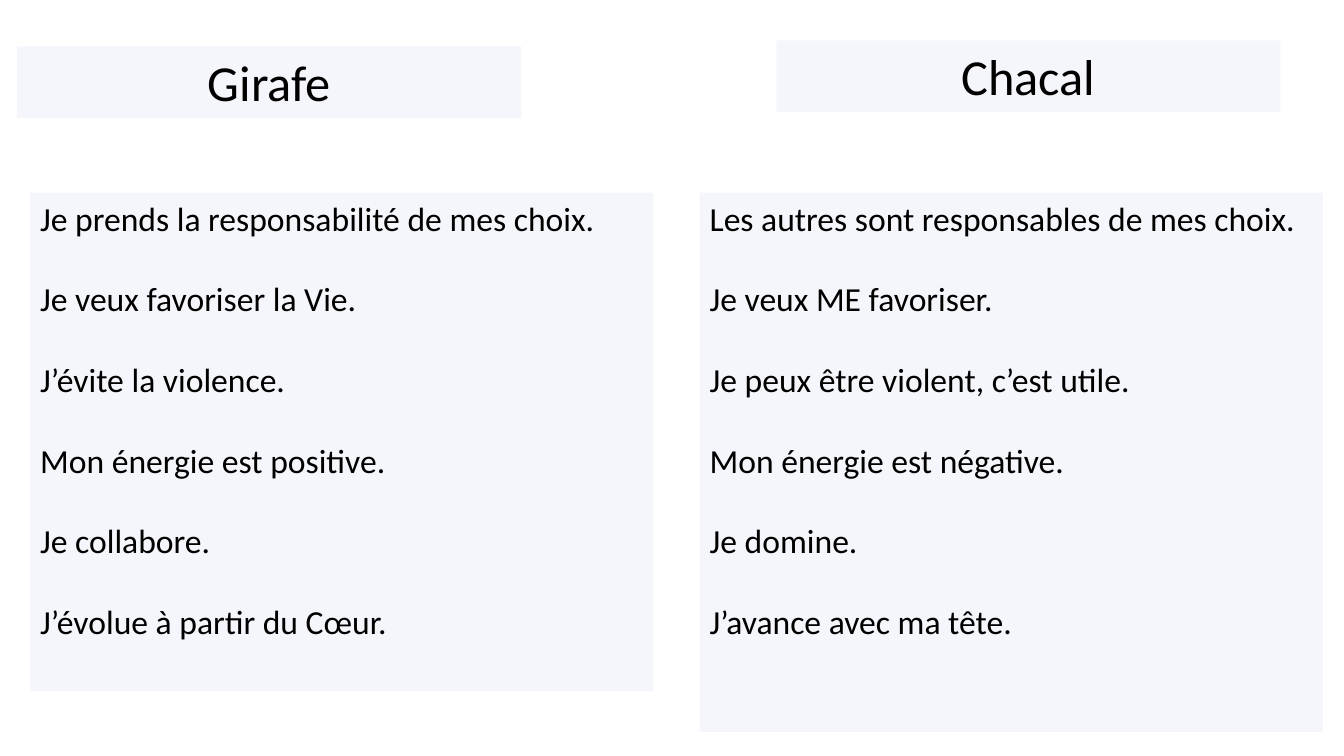
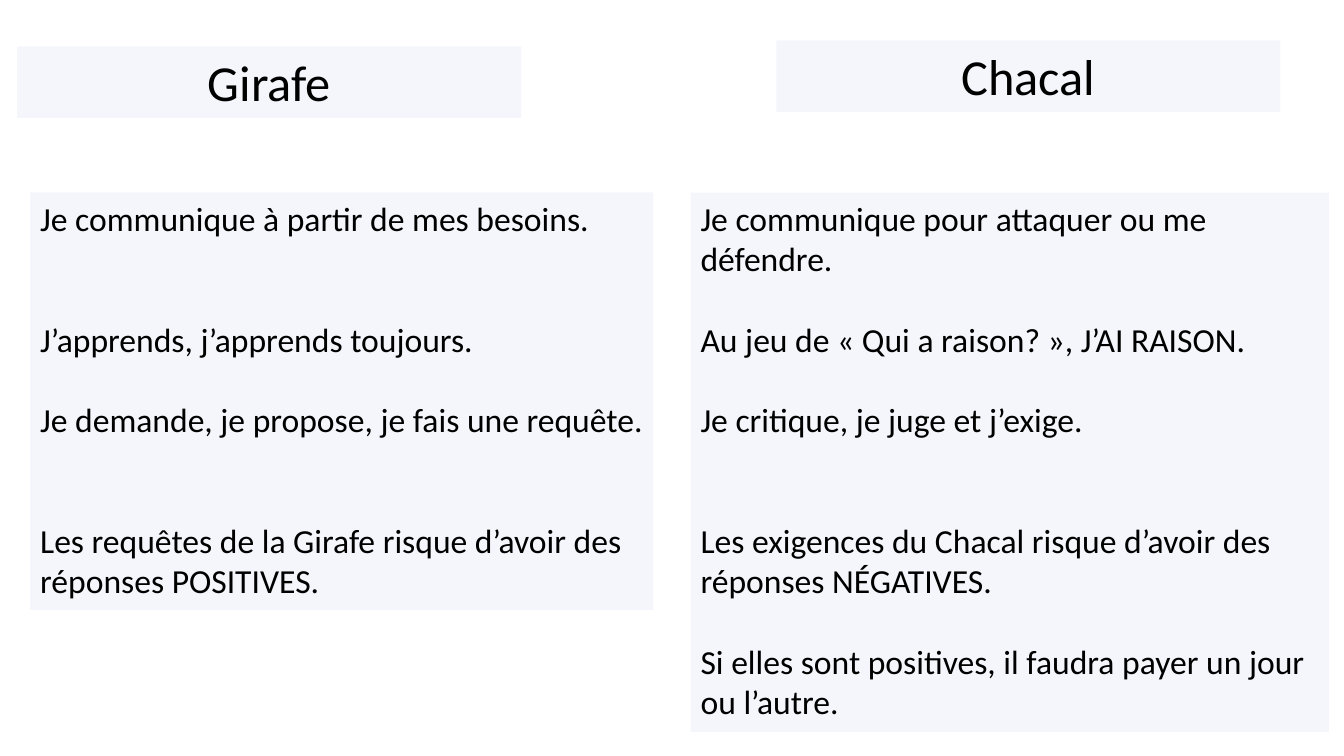
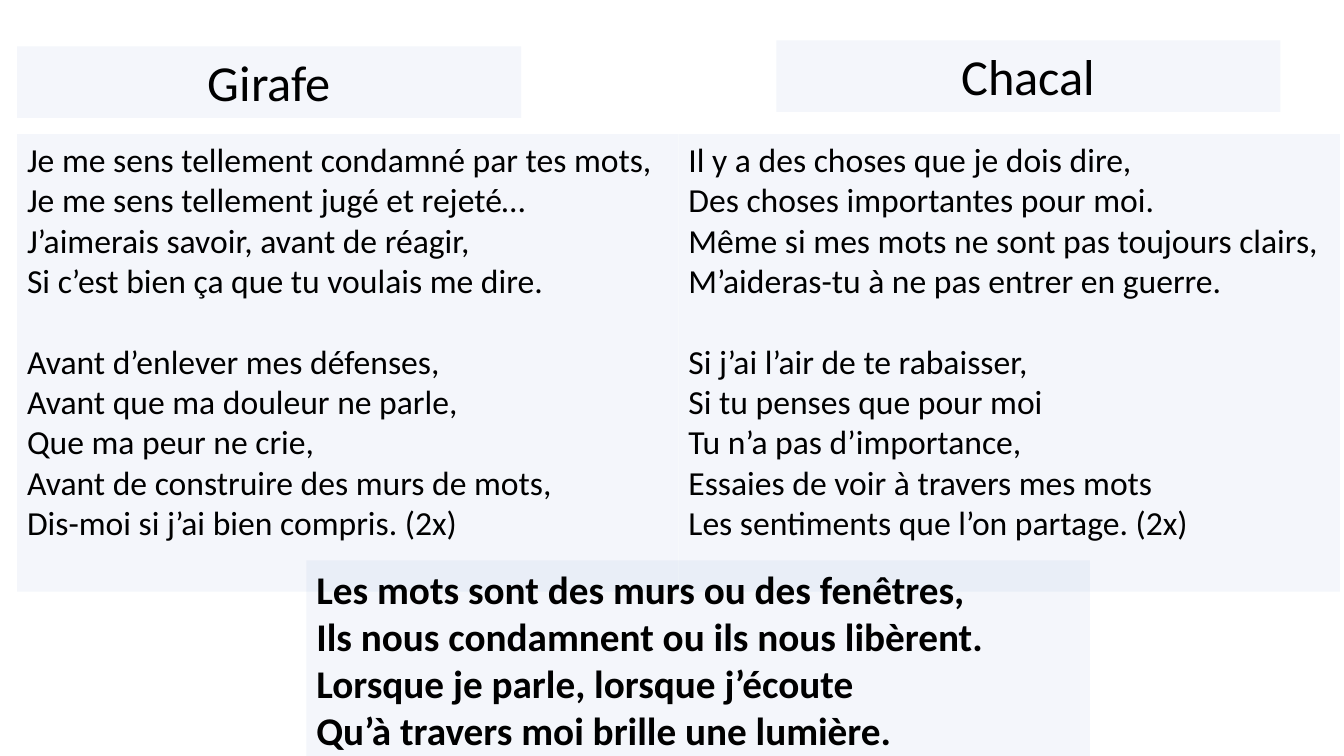
from lxml import etree
from pptx import Presentation
from pptx import util as u
from pptx.dml import color
from pptx.enum import text
from pptx.oxml import ns

COLORS = {"panel": "4472C4", "ink": "000000"}
PANEL_OPACITY = 6
LINE_PITCH = 28.8

HEADING = {"name": "Calibri", "size": u.Pt(36), "bold": False}
BODY = {"name": "Calibri", "size": u.Pt(24), "bold": False}
CHORUS = {"name": "Calibri", "size": u.Pt(28), "bold": True}
FRAME = {
    "word_wrap": True,
    "auto_size": text.MSO_AUTO_SIZE.NONE,
    "vertical_anchor": text.MSO_ANCHOR.TOP,
    "margin_left": u.Inches(0.1),
    "margin_right": u.Inches(0.1),
    "margin_top": u.Inches(0.05),
    "margin_bottom": u.Inches(0.05),
}

GIRAFE_AREA = (0.17, 0.46, 5, 0.71)
CHACAL_AREA = (7.7, 0.4, 5, 0.71)
CHORUS_AREA = (3.04, 5.56, 7.77, 1.94)

EVEN_GAPS = (0, 1, 1, 1, 1, 1)
STANZA_GAPS = (0, 0, 0, 0, 1, 0, 0, 0, 0, 0)

CHOICES = [
    ((0.3, 1.91, 6.18, 4.95), EVEN_GAPS, [
        "Je prends la responsabilité de mes choix.",
        "Je veux favoriser la Vie.",
        "J’évite la violence.",
        "Mon énergie est positive.",
        "Je collabore.",
        "J’évolue à partir du Cœur.",
    ]),
    ((6.94, 1.91, 6.18, 5.35), EVEN_GAPS, [
        "Les autres sont responsables de mes choix.",
        "Je veux ME favoriser.",
        "Je peux être violent, c’est utile.",
        "Mon énergie est négative.",
        "Je domine.",
        "J’avance avec ma tête.",
    ]),
]

REQUESTS = [
    ((0.3, 1.91, 6.18, 4.14), (0, 2, 1, 2), [
        "Je communique à partir de mes besoins.",
        "J’apprends, j’apprends toujours.",
        "Je demande, je propose, je fais une requête.",
        "Les requêtes de la Girafe risque d’avoir des réponses POSITIVES.",
    ]),
    ((6.85, 1.91, 6.33, 5.35), (0, 1, 1, 2, 1), [
        "Je communique pour attaquer ou me défendre.",
        "Au jeu de « Qui a raison? », J’AI RAISON.",
        "Je critique, je juge et j’exige.",
        "Les exigences du Chacal risque d’avoir des réponses NÉGATIVES.",
        "Si elles sont positives, il faudra payer un jour ou l’autre.",
    ]),
]

VERSES = [
    ((0.17, 1.33, 6.56, 4.54), STANZA_GAPS, [
        "Je me sens tellement condamné par tes mots,",
        "Je me sens tellement jugé et rejeté…",
        "J’aimerais savoir, avant de réagir,",
        "Si c’est bien ça que tu voulais me dire.",
        "Avant d’enlever mes défenses,",
        "Avant que ma douleur ne parle,",
        "Que ma peur ne crie,",
        "Avant de construire des murs de mots,",
        "Dis-moi si j’ai bien compris. (2x)",
    ]),
    ((6.73, 1.33, 6.56, 4.54), STANZA_GAPS, [
        "Il y a des choses que je dois dire,",
        "Des choses importantes pour moi.",
        "Même si mes mots ne sont pas toujours clairs,",
        "M’aideras-tu à ne pas entrer en guerre.",
        "Si j’ai l’air de te rabaisser,",
        "Si tu penses que pour moi",
        "Tu n’a pas d’importance,",
        "Essaies de voir à travers mes mots",
        "Les sentiments que l’on partage. (2x)",
    ]),
]

REFRAIN = [
    "Les mots sont des murs ou des fenêtres,",
    "Ils nous condamnent ou ils nous libèrent.",
    "Lorsque je parle, lorsque j’écoute",
    "Qu’à travers moi brille une lumière.",
]


def apply(target, values):
    for name, value in values.items():
        setattr(target, name, value)


def tint(box):
    box.fill.solid()
    box.fill.fore_color.rgb = color.RGBColor.from_string(COLORS["panel"])
    shade = box._element.spPr.find(".//" + ns.qn("a:srgbClr"))
    etree.SubElement(shade, ns.qn("a:alpha"), val=str(PANEL_OPACITY * 1000))


def write(box, lines, style, gaps, align):
    frame = box.text_frame
    apply(frame, FRAME)
    for index, (line, gap) in enumerate(zip(lines, gaps)):
        para = frame.add_paragraph() if index else frame.paragraphs[0]
        apply(para, {"alignment": align, "space_before": u.Pt(gap * LINE_PITCH)})
        span = para.add_run()
        span.text = line
        apply(span.font, style)
        span.font.color.rgb = color.RGBColor.from_string(COLORS["ink"])


def add_panel(page, area, lines, style, gaps, align=text.PP_ALIGN.LEFT):
    box = page.shapes.add_textbox(*map(u.Inches, area))
    tint(box)
    write(box, lines, style, gaps, align)


def add_page(deck, columns):
    page = deck.slides.add_slide(deck.slide_layouts[5])
    title = page.shapes.title
    apply(title, dict(zip(("left", "top", "width", "height"), map(u.Inches, GIRAFE_AREA))))
    tint(title)
    write(title, ["Girafe"], HEADING, (0,), text.PP_ALIGN.CENTER)
    add_panel(page, CHACAL_AREA, ["Chacal"], HEADING, (0,), text.PP_ALIGN.CENTER)
    for area, gaps, lines in columns:
        add_panel(page, area, lines, BODY, gaps)
    return page


def main():
    deck = Presentation()
    apply(deck, {"slide_width": u.Inches(13.33), "slide_height": u.Inches(7.5)})
    add_page(deck, CHOICES)
    add_page(deck, REQUESTS)
    song = add_page(deck, VERSES)
    add_panel(song, CHORUS_AREA, REFRAIN, CHORUS, (0, 0, 0, 0))
    deck.save("out.pptx")


if __name__ == "__main__":
    main()
